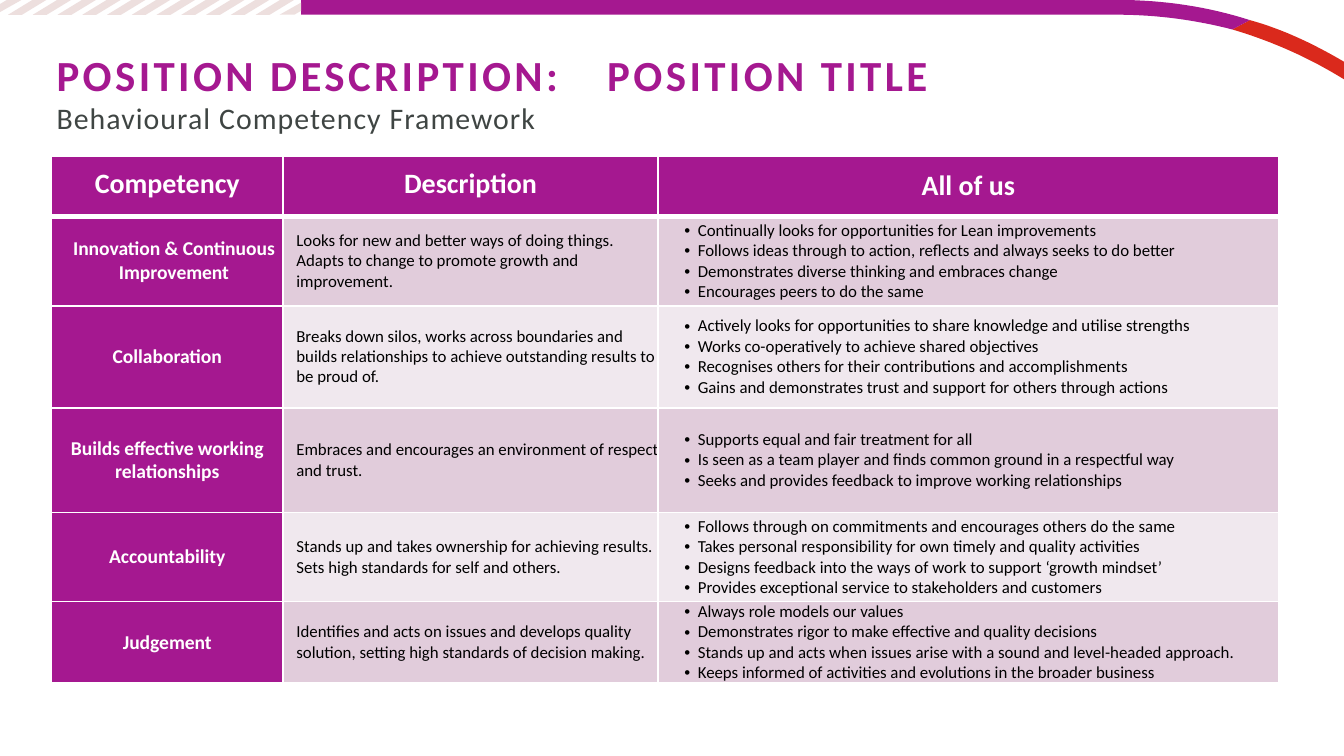
import dataclasses

import pptx
import pptx.dml.color
import pptx.enum.text
import pptx.oxml
import pptx.oxml.ns
import pptx.util

Pt = pptx.util.Pt
ALIGN = pptx.enum.text.PP_ALIGN
ANCHOR = pptx.enum.text.MSO_ANCHOR

PURPLE, RED, STRIPE = "A51890", "DA291C", "EDDFDE"
WHITE, BLACK, GREY = "FFFFFF", "000000", "3F4543"
BANDS = ("E1CCDB", "F0E8EE")

BAND_H = 7.9
STRIPE_STEP, STRIPE_W, STRIPE_SKEW = 13.27, 7.5, 13


@dataclasses.dataclass
class Style:
    size: float
    color: str
    bold: bool = False
    spacing: float = 0


@dataclasses.dataclass
class Competency:
    name: str
    description: str
    behaviours: list[str]
    height: float
    name_indent: float = 0


TITLE = Style(23, PURPLE, True, 1.8)
SUBTITLE = Style(16, GREY, spacing=0.6)
HEADER = Style(15, WHITE, True)
NAME = Style(10.5, WHITE, True)
BODY = Style(9, BLACK)

COLUMNS = {"Competency": 123.9, "Description": 201, "All of us": 332.5}
HEADER_H = 32
COMPETENCIES = [
    Competency("Innovation & Continuous Improvement",
               "Looks for new and better ways of doing things. Adapts to change "
               "to promote growth and improvement.",
               ["Continually looks for opportunities for Lean improvements",
                "Follows ideas through to action, reflects and always seeks to do better",
                "Demonstrates diverse thinking and embraces change",
                "Encourages peers to do the same"], 48, 7.2),
    Competency("Collaboration",
               "Breaks down silos, works across boundaries and builds relationships "
               "to achieve outstanding results to be proud of.",
               ["Actively looks for opportunities to share knowledge and utilise strengths",
                "Works co-operatively to achieve shared objectives",
                "Recognises others for their contributions and accomplishments",
                "Gains and demonstrates trust and support for others through actions"], 54.6),
    Competency("Builds effective working relationships",
               "Embraces and encourages an environment of respect and trust.",
               ["Supports equal and fair treatment for all",
                "Is seen as a team player and finds common ground in a respectful way",
                "Seeks and provides feedback to improve working relationships"], 56.2),
    Competency("Accountability",
               "Stands up and takes ownership for achieving results. Sets high "
               "standards for self and others.",
               ["Follows through on commitments and encourages others do the same",
                "Takes personal responsibility for own timely and quality activities",
                "Designs feedback into the ways of work to support ‘growth mindset’",
                "Provides exceptional service to stakeholders and customers"], 47.6),
    Competency("Judgement",
               "Identifies and acts on issues and develops quality solution, "
               "setting high standards of decision making.",
               ["Always role models our values",
                "Demonstrates rigor to make effective and quality decisions",
                "Stands up and acts when issues arise with a sound and level-headed approach.",
                "Keeps informed of activities and evolutions in the broader business"], 43.4),
]


def rgb(color: str) -> pptx.dml.color.RGBColor:
    return pptx.dml.color.RGBColor.from_string(color)


def xml(text: str):
    """Parse one DrawingML element given without its namespace."""
    tag, rest = text[:-2].partition(" ")[::2]
    return pptx.oxml.parse_xml(f"{tag} {pptx.oxml.ns.nsdecls('a')} {rest}/>")


def curve(p0, p1, p2, p3, steps: int = 16) -> list:
    """Points along a cubic Bézier."""
    points = []
    for i in range(steps + 1):
        t = i / steps
        weights = ((1 - t) ** 3, 3 * t * (1 - t) ** 2, 3 * t * t * (1 - t), t ** 3)
        points.append(tuple(sum(w * p[axis] for w, p in zip(weights, (p0, p1, p2, p3)))
                            for axis in (0, 1)))
    return points


def draw_outline(shapes, points: list, color: str) -> None:
    (x, y), *others = [(Pt(px), Pt(py)) for px, py in points]
    builder = shapes.build_freeform(x, y)
    builder.add_line_segments(others, close=True)
    sp = builder.convert_to_shape()
    sp.fill.solid()
    sp.fill.fore_color.rgb = rgb(color)
    sp.line.fill.background()
    sp.shadow.inherit = False


def draw_banner(shapes) -> None:
    tip, notch = (669.6, 10.8), (660.2, 15.8)
    draw_outline(shapes, [tip, notch]
                 + curve(notch, (682, 22.3), (701.3, 31), (720, 42.5))
                 + curve((720, 33.1), (704.2, 23.8), (687.6, 15.8), tip), RED)
    draw_outline(shapes, curve(tip, (647.3, 3.6), (623.5, 0), (599, 0))
                 + [(161.3, 0), (161.3, BAND_H)]
                 + curve((599, BAND_H), (620, BAND_H), (640.8, 10.8), notch), PURPLE)
    for i in range(11):
        x = 4.3 + i * STRIPE_STEP
        draw_outline(shapes, [(x + STRIPE_SKEW, 0), (x, BAND_H), (x + STRIPE_W, BAND_H),
                              (x + STRIPE_W + STRIPE_SKEW, 0)], STRIPE)
    draw_outline(shapes, [(161.3, 5.8), (161.3, 1.4), (149.8, BAND_H), (157.7, BAND_H)], STRIPE)
    draw_outline(shapes, [(3.6, 0), (0, 2.2), (0, 6.5), (11.5, 0)], STRIPE)


def write(p, text: str, style: Style, align=ALIGN.LEFT, left: float = 0,
          hanging: float = 0) -> None:
    """Fill a paragraph; a hanging indent brings a bullet."""
    p.alignment, p.space_before = align, Pt(0)
    pPr = p._p.get_or_add_pPr()
    pPr.set("marL", str(Pt(left)))
    pPr.set("indent", str(-Pt(hanging)))
    if hanging:
        pPr.append(xml('<a:buFont typeface="Arial"/>'))
        pPr.append(xml('<a:buChar char="•"/>'))
    else:
        pPr.append(xml("<a:buNone />"))
    r = p.add_run()
    r.text = text
    for key, value in dict(name="Calibri", size=Pt(style.size), bold=style.bold).items():
        setattr(r.font, key, value)
    r.font.color.rgb = rgb(style.color)
    if style.spacing:
        r._r.get_or_add_rPr().set("spc", str(round(style.spacing * 100)))


def fill_placeholder(sp, top: float, height: float, inset_top: float, text: str,
                     style: Style) -> None:
    box = dict(left=Pt(27.4), top=Pt(top), width=Pt(593.3), height=Pt(height))
    for key, value in box.items():
        setattr(sp, key, value)
    tf = sp.text_frame
    frame = dict(margin_left=Pt(2.9), margin_right=Pt(2.9), margin_top=Pt(inset_top),
                 margin_bottom=Pt(2.9), vertical_anchor=ANCHOR.TOP, word_wrap=True,
                 auto_size=pptx.enum.text.MSO_AUTO_SIZE.NONE)
    for key, value in frame.items():
        setattr(tf, key, value)
    write(tf.paragraphs[0], text, style)


def format_cell(cell, color: str, top: float = 1, bottom: float = 1,
                side: float = 0, below: float = 0) -> None:
    """Set borders, fill, margins and anchor of a cell."""
    tcPr = cell._tc.get_or_add_tcPr()
    for edge, width in dict(lnL=1, lnR=1, lnT=top, lnB=bottom).items():
        ln = xml(f'<a:{edge} w="{Pt(width)}"/>')
        fill = xml("<a:solidFill />")
        fill.append(xml(f'<a:srgbClr val="{WHITE}"/>'))
        ln.append(fill)
        tcPr.append(ln)
    cell.fill.solid()
    cell.fill.fore_color.rgb = rgb(color)
    layout = dict(margin_left=Pt(side), margin_right=Pt(side), margin_top=0,
                  margin_bottom=Pt(below), vertical_anchor=ANCHOR.MIDDLE)
    for key, value in layout.items():
        setattr(cell, key, value)


def draw_table(shapes) -> None:
    heights = [HEADER_H] + [c.height for c in COMPETENCIES]
    table = shapes.add_table(len(heights), len(COLUMNS), Pt(27.7), Pt(83.9),
                             Pt(sum(COLUMNS.values())), Pt(sum(heights))).table
    table.first_row = table.horz_banding = False
    for row, height in zip(table.rows, heights):
        row.height = Pt(height)
    for i, (heading, width) in enumerate(COLUMNS.items()):
        table.columns[i].width = Pt(width)
        cell = table.cell(0, i)
        last = i == len(COLUMNS) - 1
        format_cell(cell, PURPLE, bottom=3, side=0 if last else 4.3, below=0 if last else 2.2)
        write(cell.text_frame.paragraphs[0], heading, HEADER, ALIGN.CENTER)
    for i, item in enumerate(COMPETENCIES):
        cells = [table.cell(i + 1, col) for col in range(len(COLUMNS))]
        band = BANDS[i % 2]
        for cell, color in zip(cells, (PURPLE, band, band)):
            format_cell(cell, color, top=1 if i else 3)
        name, description, behaviours = (cell.text_frame for cell in cells)
        write(name.paragraphs[0], item.name, NAME, ALIGN.CENTER, item.name_indent)
        write(description.paragraphs[0], item.description, BODY, left=7.2)
        for n, line in enumerate(item.behaviours):
            p = behaviours.add_paragraph() if n else behaviours.paragraphs[0]
            write(p, line, BODY, left=21.3, hanging=7.2)


def main() -> None:
    prs = pptx.Presentation()
    prs.slide_width, prs.slide_height = Pt(720), Pt(405)
    s = prs.slides.add_slide(prs.slide_layouts[1])
    draw_banner(s.shapes.add_group_shape().shapes)
    fill_placeholder(s.shapes.title, 25.9, 23, 0, "POSITION DESCRIPTION:\t POSITION TITLE", TITLE)
    fill_placeholder(s.placeholders[1], 50.4, 21.6, 2.9, "Behavioural Competency Framework",
                     SUBTITLE)
    draw_table(s.shapes)
    prs.save("out.pptx")


if __name__ == "__main__":
    main()
